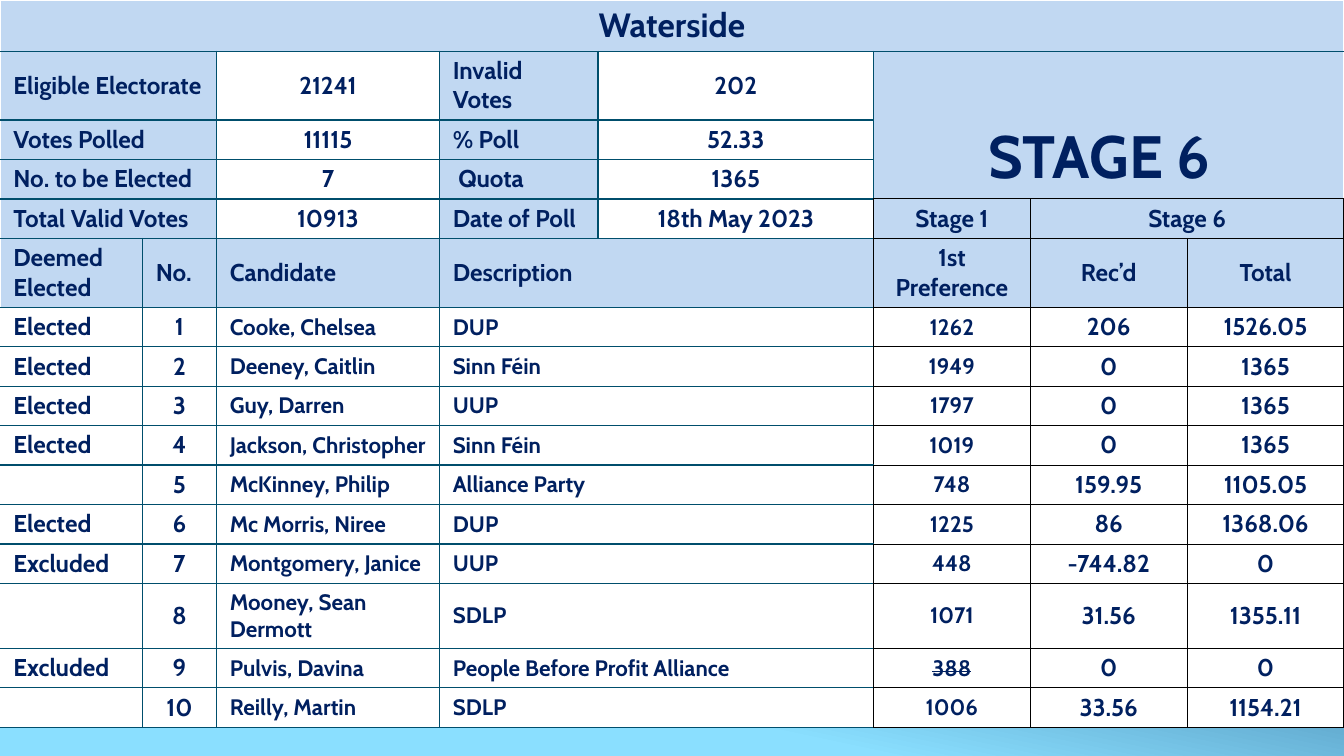
"""Build the Waterside election count table at stage 6."""
from lxml import etree
from pptx import Presentation
from pptx.dml.color import RGBColor
from pptx.enum.text import MSO_ANCHOR, PP_ALIGN
from pptx.oxml.ns import qn
from pptx.util import Inches, Pt

MIDDLE, BOTTOM = MSO_ANCHOR.MIDDLE, MSO_ANCHOR.BOTTOM
LEFT, CENTER = PP_ALIGN.LEFT, PP_ALIGN.CENTER
COLORS = {"navy": "002060", "pale": "C1D8F2", "white": "FFFFFF", "teal": "004E6C",
          "black": "000000", "deep": "0D3868", "sky": "8ADFFF"}
BORDER_WIDTHS = {"white": Pt(1), "teal": Pt(0.75), "black": Pt(0.5)}
FONT = "Cabin"
COLUMN_WIDTHS = [1.06, 0.55, 1.66, 1.18, 2.05] + [3.5 / 3] * 3
ROW_HEIGHTS = [0.37] + [0.28] * 4 + [0.48] + [0.28] * 10
STAGE_ROW, HEADER_ROW, RESULTS_COLUMN = 4, 5, 5

SUMMARY = [
    ("Eligible Electorate", "21241", "Invalid Votes", "202"),
    ("Votes Polled", "11115", "% Poll", "52.33"),
    ("No. to be Elected", "7", " Quota", "1365"),
    ("Total Valid Votes", "10913", "Date of Poll", "18th May 2023"),
]
HEADINGS = ("Deemed Elected", "No.", "Candidate", "Description", "1st Preference", "Rec’d", "Total")
CANDIDATES = [
    ("Elected", "1", "Cooke, Chelsea", "DUP", "1262", "206", "1526.05"),
    ("Elected", "2", "Deeney, Caitlin", "Sinn Féin", "1949", "0", "1365"),
    ("Elected", "3", "Guy, Darren", "UUP", "1797", "0", "1365"),
    ("Elected", "4", "Jackson, Christopher", "Sinn Féin", "1019", "0", "1365"),
    ("", "5", "McKinney, Philip", "Alliance Party", "748", "159.95", "1105.05"),
    ("Elected", "6", "Mc Morris, Niree", "DUP", "1225", "86", "1368.06"),
    ("Excluded", "7", "Montgomery, Janice", "UUP", "448", "-744.82", "0"),
    ("", "8", "Mooney, Sean Dermott", "SDLP", "1071", "31.56", "1355.11"),
    ("Excluded", "9", "Pulvis, Davina", "People Before Profit Alliance", "388", "0", "0"),
    ("", "10", "Reilly, Martin", "SDLP", "1006", "33.56", "1154.21"),
]


def set_borders(cell, edges):
    properties = cell._tc.get_or_add_tcPr()
    for side, color in edges.items():
        line = etree.SubElement(properties, qn(f"a:ln{side}"), w=str(BORDER_WIDTHS[color]))
        fill = etree.SubElement(line, qn("a:solidFill"))
        etree.SubElement(fill, qn("a:srgbClr"), val=COLORS[color])


def fill_cells(row, column, text, rows=1, columns=1, size=13, align=LEFT, fill="pale", anchor=MIDDLE):
    last_row, last_column = row + rows - 1, column + columns - 1
    in_results = column >= RESULTS_COLUMN
    base = "black" if in_results and row >= STAGE_ROW else "teal"
    edges = {"L": base, "R": base, "T": base, "B": base}
    if column == 0:
        edges["L"] = "white"
    if last_column == RESULTS_COLUMN - 1 and row >= STAGE_ROW:
        edges["R"] = "black"
    if last_column == len(COLUMN_WIDTHS) - 1 and row < STAGE_ROW:
        edges["R"] = "white"
    if row == 0:
        edges["T"] = "white"
    if in_results and last_row == STAGE_ROW - 1:
        edges["B"] = "black"
    for spanned_row in range(row, last_row + 1):
        for spanned_column in range(column, last_column + 1):
            cell = table.cell(spanned_row, spanned_column)
            set_borders(cell, edges)
            cell.fill.solid()
            cell.fill.fore_color.rgb = RGBColor.from_string(COLORS[fill])
            cell.text_frame.paragraphs[0]._p.get_or_add_endParaRPr().set("sz", "1200")
    cell = table.cell(row, column)
    if rows * columns > 1:
        cell.merge(table.cell(last_row, last_column))
    cell.vertical_anchor = anchor
    cell.margin_top = cell.margin_bottom = Pt(2.7)
    paragraph = cell.text_frame.paragraphs[0]
    if text:
        paragraph.add_run().text = text
    paragraph.alignment = align
    paragraph.font.name = FONT
    paragraph.font.size = Pt(size)
    paragraph.font.bold = True
    paragraph.font.color.rgb = RGBColor.from_string(COLORS["navy"])
    return paragraph


presentation = Presentation()
presentation.slide_width = Inches(10)
presentation.slide_height = presentation.slide_width * 9 // 16
slide = presentation.slides.add_slide(presentation.slide_layouts[6])

background = slide.background.fill
background.gradient()
background.gradient_angle = 360 - 102
for stop, (position, color) in zip(background.gradient_stops, [(0.42, "deep"), (0.82, "sky")]):
    stop.position = position
    stop.color.rgb = RGBColor.from_string(COLORS[color])

table_frame = slide.shapes.add_table(len(ROW_HEIGHTS), len(COLUMN_WIDTHS), 0, 0,
                                     presentation.slide_width, Inches(sum(ROW_HEIGHTS)))
table = table_frame.table
table.first_row = table.horz_banding = False
for table_column, width in zip(table.columns, COLUMN_WIDTHS):
    table_column.width = Inches(width)
for table_row, height in zip(table.rows, ROW_HEIGHTS):
    table_row.height = Inches(height)
table_frame.height = Inches(5.15)

fill_cells(0, 0, "Waterside", columns=8, size=18, align=CENTER)
stage_title = fill_cells(1, RESULTS_COLUMN, "STAGE 6 ", rows=3, columns=3, size=32,
                         align=CENTER, anchor=BOTTOM)
stage_space = stage_title.add_run()
stage_space.text = " "
stage_space.font.size = Pt(13)
fill_cells(STAGE_ROW, RESULTS_COLUMN, "Stage 1", align=CENTER)
fill_cells(STAGE_ROW, RESULTS_COLUMN + 1, "Stage 6", columns=2, align=CENTER)

for row, (label, value, second_label, second_value) in enumerate(SUMMARY, start=1):
    fill_cells(row, 0, label, columns=2)
    fill_cells(row, 2, value, align=CENTER, fill="white")
    fill_cells(row, 3, second_label)
    fill_cells(row, 4, second_value, align=CENTER, fill="white")

for row, texts in enumerate([HEADINGS] + CANDIDATES, start=HEADER_ROW):
    is_header = row == HEADER_ROW
    for column, text in zip((0, 1, 2, 3, 5, 6, 7), texts):
        centered = column >= RESULTS_COLUMN or (column == 1 and not is_header)
        small = column in (2, 3, 5) and not is_header
        paragraph = fill_cells(row, column, text, columns=2 if column == 3 else 1,
                               size=12 if small else 13, align=CENTER if centered else LEFT,
                               fill="pale" if is_header else "white")
        if text == "388":
            paragraph.runs[0]._r.get_or_add_rPr().set("strike", "sngStrike")

presentation.save("out.pptx")
